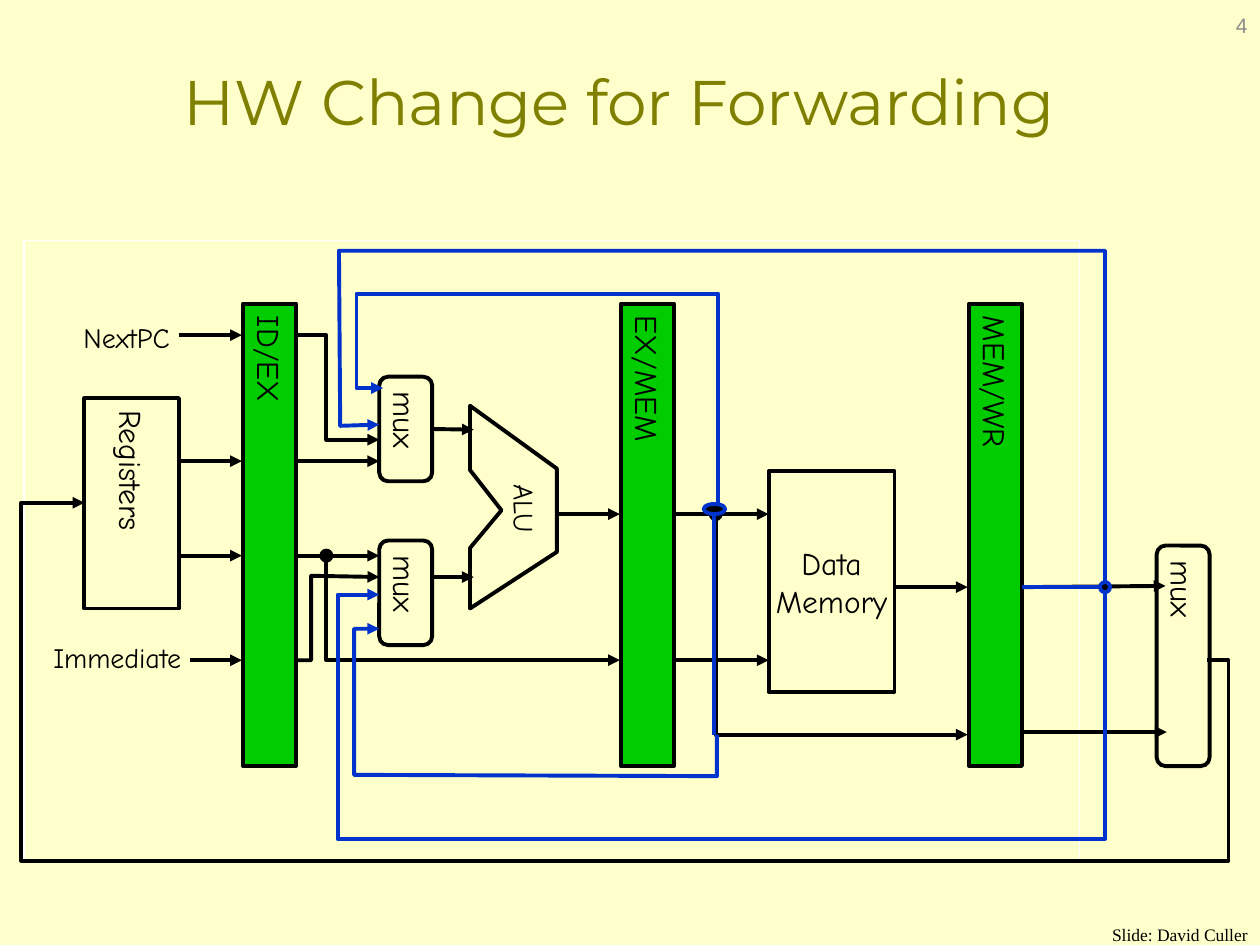
"""Build the slide on hardware changes for forwarding in a pipelined datapath."""
from lxml import etree
from pptx import Presentation
from pptx.dml import color
from pptx.enum import shapes, text
from pptx.oxml import ns
from pptx.util import Inches, Pt

BLACK, BLUE, GREEN = "000000", "0033CC", "00CC00"
RECT, ROUND, OVAL = (shapes.MSO_SHAPE.RECTANGLE, shapes.MSO_SHAPE.ROUNDED_RECTANGLE,
                     shapes.MSO_SHAPE.OVAL)
CENTER, RIGHT = text.PP_ALIGN.CENTER, text.PP_ALIGN.RIGHT

REGISTER_TOP, REGISTER_SIZE = 2.41, (0.42, 3.67)
PIPELINE_REGISTERS = [("MEM/WR", 7.69), ("ID/EX", 1.93), ("EX/MEM", 4.93)]
MUXES = [(3.01, 2.99, 0.42, 0.83), (3.01, 4.29, 0.42, 0.83), (9.18, 4.33, 0.42, 1.75)]
ALU = [(3.73, 3.22), (4.42, 3.72), (4.42, 4.38), (3.73, 4.83),
       (3.73, 4.35), (3.98, 4.05), (3.73, 3.73)]
LABELS = [
    ("NextPC", (0.51, 2.49, 0.99, 0.37), {}),
    ("Immediate", (0.27, 5.03, 1.32, 0.37), {}),
    ("ALU", (3.84, 3.85, 0.65, 0.37), {"rotation": 90}),
    ("HW Change for Forwarding", (0.58, 0.17, 8.67, 1.25),
     {"size": 36, "font": "Montserrat", "ink": "808000", "wrap": True}),
    ("Slide: David Culler", (8.72, 7.33, 1.28, 0.17),
     {"size": 10, "font": "Times New Roman", "align": RIGHT, "inset": 0}),
    ("4", (7.67, 0, 2.33, 0.4),
     {"size": 12, "font": "Arial", "ink": "8C8C8C", "align": RIGHT, "wrap": True}),
]
ARROWS = [
    (3.42, 4.58, 3.76, 4.58), (1.42, 3.66, 1.92, 3.66), (1.42, 4.41, 1.92, 4.41),
    (2.34, 3.66, 3.01, 3.66), (2.34, 4.41, 3.01, 4.41), (1.42, 2.66, 1.92, 2.66),
    (1.51, 5.24, 1.92, 5.24), (5.34, 5.24, 6.1, 5.24), (4.42, 4.08, 4.92, 4.08),
    (5.34, 4.08, 6.1, 4.08), (7.1, 4.66, 7.68, 4.66), (8.13, 5.81, 9.26, 5.81),
    (8.11, 4.66, 9.25, 4.65),
]
DATA_PATHS = [
    [(2.34, 2.66), (2.59, 2.66), (2.59, 3.49), (3.01, 3.49)],
    [(2.34, 5.24), (2.47, 5.24), (2.47, 4.57), (3.01, 4.58)],
    [(2.59, 4.41), (2.59, 5.24), (4.92, 5.24)],
    [(5.68, 4.08), (5.68, 5.83), (7.68, 5.83)],
    [(9.58, 5.24), (9.75, 5.24), (9.75, 6.83), (0.17, 6.83), (0.17, 3.99), (0.67, 3.99)],
]
FORWARDING_PATHS = [
    [(8.77, 4.66), (8.77, 1.99), (2.69, 1.99), (2.7, 3.38), (3.01, 3.37)],
    [(8.11, 4.66), (8.77, 4.66), (8.77, 6.66), (2.68, 6.66), (2.68, 4.72), (3.01, 4.72)],
    [(5.69, 5.83), (5.69, 6.16), (2.81, 6.15), (2.81, 4.99), (3.01, 4.99)],
    [(5.7, 4.08), (5.7, 2.33), (2.83, 2.33), (2.83, 3.08), (3.04, 3.08)],
]
JUNCTIONS = [(5.68, 4.08, 0.08, BLACK), (2.59, 4.41, 0.08, BLACK),
             (8.77, 4.66, 0.08, BLUE), (5.67, 4.04, 0.17, BLUE)]

deck = Presentation()
deck.slide_width, deck.slide_height = Inches(10), Inches(7.5)
slide = deck.slides.add_slide(deck.slide_layouts[6])


def rgb(value):
    """Turn a hex string into a colour."""
    return color.RGBColor.from_string(value)


def write(holder, words, size=18, font="Comic Neue", ink=BLACK, align=CENTER,
          wrap=False, vertical=False, inset=0.05):
    """Put formatted text into a shape or text box."""
    frame = holder.text_frame
    frame.text = words
    frame.word_wrap = wrap
    frame.vertical_anchor = text.MSO_ANCHOR.MIDDLE
    frame.margin_top = frame.margin_bottom = Inches(inset)
    if vertical:
        frame._txBody.bodyPr.set("vert", "eaVert")
    for paragraph in frame.paragraphs:
        paragraph.alignment = align
        face = paragraph.runs[0].font
        face.size, face.name, face.color.rgb = Pt(size), font, rgb(ink)


def outline(part, ink=BLACK, width=2.25, arrow=False):
    """Set the line of a part, with an arrowhead at its end on request."""
    part.line.color.rgb, part.line.width = rgb(ink), Pt(width)
    if arrow:
        line = part.element.spPr.find(ns.qn("a:ln"))
        etree.SubElement(line, ns.qn("a:tailEnd"), type="triangle")


def block(kind, place, fill=None, ink=BLACK, width=2.25):
    """Add a preset shape."""
    part = slide.shapes.add_shape(kind, *map(Inches, place))
    part.shadow.inherit = False
    if fill:
        part.fill.solid()
        part.fill.fore_color.rgb = rgb(fill)
    else:
        part.fill.background()
    outline(part, ink, width)
    return part


def wire(x1, y1, x2, y2, ink=BLACK, arrow=True):
    """Add a straight connector."""
    part = slide.shapes.add_connector(shapes.MSO_CONNECTOR.STRAIGHT,
                                      *map(Inches, (x1, y1, x2, y2)))
    outline(part, ink, arrow=arrow)
    etree.SubElement(part.element.spPr, ns.qn("a:effectLst"))
    return part


def polyline(points, ink=BLACK, closed=False):
    """Add a bent path, or a closed outline."""
    (x, y), *rest = [(Inches(a), Inches(b)) for a, b in points]
    builder = slide.shapes.build_freeform(x, y)
    builder.add_line_segments(rest, close=closed)
    part = builder.convert_to_shape()
    part.shadow.inherit = False
    part.fill.background()
    outline(part, ink, arrow=not closed)


def label(words, place, rotation=0, size=16, **style):
    """Add a text box."""
    box = slide.shapes.add_textbox(*map(Inches, place))
    box.rotation = rotation
    write(box, words, size=size, **style)


slide.background.fill.solid()
slide.background.fill.fore_color.rgb = rgb("FFFFCC")
block(RECT, (0.19, 1.91, 8.38, 4.93), ink="FFFFFE", width=0)
for stage, left in PIPELINE_REGISTERS:
    write(block(RECT, (left, REGISTER_TOP, *REGISTER_SIZE), GREEN), stage, vertical=True)
write(block(RECT, (6.1, 3.74, 1, 1.75)), "Data\nMemory")
write(block(RECT, (0.67, 3.16, 0.75, 1.67)), "Registers", vertical=True)
polyline(ALU, closed=True)

muxes = [block(ROUND, place) for place in MUXES]
for mux in muxes:
    write(mux, "mux", vertical=True)
wire(3.43, 3.41, 3.76, 3.41).begin_connect(muxes[0], 3)

for arrow_ends in ARROWS:
    wire(*arrow_ends)
for path in DATA_PATHS:
    polyline(path)
for path in FORWARDING_PATHS:
    polyline(path, BLUE)
for x, y, width, ink in JUNCTIONS:
    block(OVAL, (x - width / 2, y - 0.04, width, 0.08), BLACK, ink)
wire(5.67, 5.83, 5.67, 4.08, BLUE, arrow=False)

for words, place, style in LABELS:
    label(words, place, **style)

deck.save("out.pptx")
